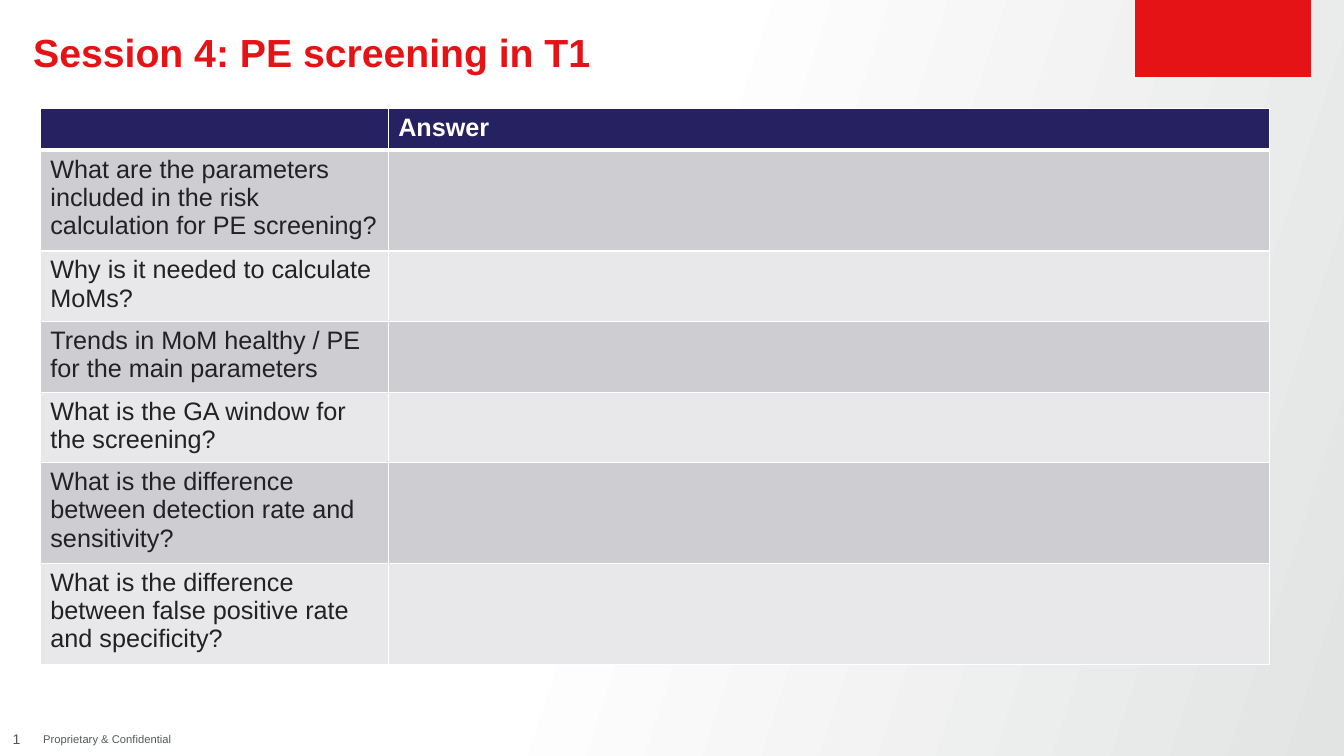
from lxml.etree import SubElement
from pptx import Presentation
from pptx.dml.color import RGBColor
from pptx.enum.shapes import MSO_SHAPE
from pptx.enum.text import MSO_ANCHOR, PP_ALIGN
from pptx.oxml import parse_xml
from pptx.oxml.ns import nsdecls, qn
from pptx.util import Inches, Pt

RED = "E61316"
NAVY = "262160"
WHITE = "FFFFFF"
GREY = "545859"
INK = "222222"
BANDS = ("CDCDD2", "E8E8EA")

# Question and row height in inches
QUESTIONS = [
    ("What are the parameters included in the risk calculation for PE screening?", 0.94),
    ("Why is it needed to calculate MoMs?", 0.66),
    ("Trends in MoM healthy / PE for the main parameters", 0.66),
    ("What is the GA window for the screening?", 0.66),
    ("What is the difference between detection rate and sensitivity?", 0.94),
    ("What is the difference between false positive rate and specificity?", 0.94),
]


def color(hex_value):
    return RGBColor.from_string(hex_value)


def style_paragraph(paragraph, size, hex_value, bold=False):
    font = paragraph.font
    font.name = "Arial"
    font.size = Pt(size)
    font.bold = bold
    font.color.rgb = color(hex_value)
    for run in paragraph.runs:
        run.font.name = "Arial"
        run.font.size = Pt(size)
        run.font.bold = bold
        run.font.color.rgb = color(hex_value)


def set_background(slide):
    fill = slide.background.fill
    fill.gradient()
    fill.gradient_angle = 342
    for stop, position, hex_value in zip(fill.gradient_stops, (0.45, 1), (WHITE, "E2E3E3")):
        stop.position = position
        stop.color.rgb = color(hex_value)


def add_corner_block(slide):
    shape = slide.shapes.add_shape(
        MSO_SHAPE.PARALLELOGRAM, Inches(11.26), 0, Inches(1.74), Inches(0.76))
    shape.adjustments[0] = 0
    shape.shadow.inherit = False
    shape.fill.solid()
    shape.fill.fore_color.rgb = color(RED)
    shape.line.fill.background()


def add_label(slide, text, box, size, hex_value, bold=False, inset=0.0,
              anchor=MSO_ANCHOR.MIDDLE, align=PP_ALIGN.LEFT, spacing=1.0):
    text_frame = slide.shapes.add_textbox(*map(Inches, box)).text_frame
    text_frame.word_wrap = True
    text_frame.vertical_anchor = anchor
    text_frame.margin_left = text_frame.margin_right = Inches(inset)
    text_frame.margin_top = text_frame.margin_bottom = Inches(inset / 2)
    text_frame.text = text
    paragraph = text_frame.paragraphs[0]
    paragraph.alignment = align
    paragraph.line_spacing = spacing
    style_paragraph(paragraph, size, hex_value, bold)


def set_borders(cell, top=1, bottom=1):
    properties = cell._tc.get_or_add_tcPr()
    widths = {"lnL": 1, "lnR": 1, "lnT": top, "lnB": bottom}
    for index, (side, width) in enumerate(widths.items()):
        line = parse_xml(f'<a:{side} {nsdecls("a")} w="{Pt(width)}"/>')
        fill = SubElement(line, qn("a:solidFill"))
        SubElement(fill, qn("a:srgbClr"), val=WHITE)
        properties.insert(index, line)


def fill_cell(cell, text, fill_hex, text_hex, bold=False, top=1, bottom=1):
    cell.text = text
    style_paragraph(cell.text_frame.paragraphs[0], 18, text_hex, bold)
    cell.fill.solid()
    cell.fill.fore_color.rgb = color(fill_hex)
    set_borders(cell, top, bottom)


def add_question_table(slide):
    heights = [0.41] + [height for _, height in QUESTIONS]
    table = slide.shapes.add_table(
        len(heights), 2, Inches(0.4), Inches(1.08),
        Inches(12.19), Inches(sum(heights))).table
    for column, width in zip(table.columns, (3.45, 8.74)):
        column.width = Inches(width)
    for row, height in zip(table.rows, heights):
        row.height = Inches(height)

    # Header row
    for column, text in enumerate(("", "Answer")):
        fill_cell(table.cell(0, column), text, NAVY, WHITE, bold=True, bottom=3)

    # Banded question rows with empty answers
    for row, (question, _) in enumerate(QUESTIONS, start=1):
        for column, text in enumerate((question, "")):
            fill_cell(table.cell(row, column), text, BANDS[(row - 1) % 2], INK,
                      top=3 if row == 1 else 1)


def main():
    presentation = Presentation()
    presentation.slide_width = Inches(13.33)
    presentation.slide_height = Inches(7.5)
    slide = presentation.slides.add_slide(presentation.slide_layouts[6])

    # Backdrop and title
    set_background(slide)
    add_corner_block(slide)
    add_label(slide, "Session 4: PE screening in T1", (0.33, 0.33, 10.67, 0.42),
              28, RED, bold=True, anchor=MSO_ANCHOR.TOP, spacing=0.9)

    # Footer
    add_label(slide, "1", (0, 7.17, 0.33, 0.33), 10, GREY, align=PP_ALIGN.CENTER)
    add_label(slide, "Proprietary & Confidential", (0.33, 7.17, 4.91, 0.33),
              8, GREY, inset=0.1)

    # Questions
    add_question_table(slide)
    presentation.save("out.pptx")


if __name__ == "__main__":
    main()
